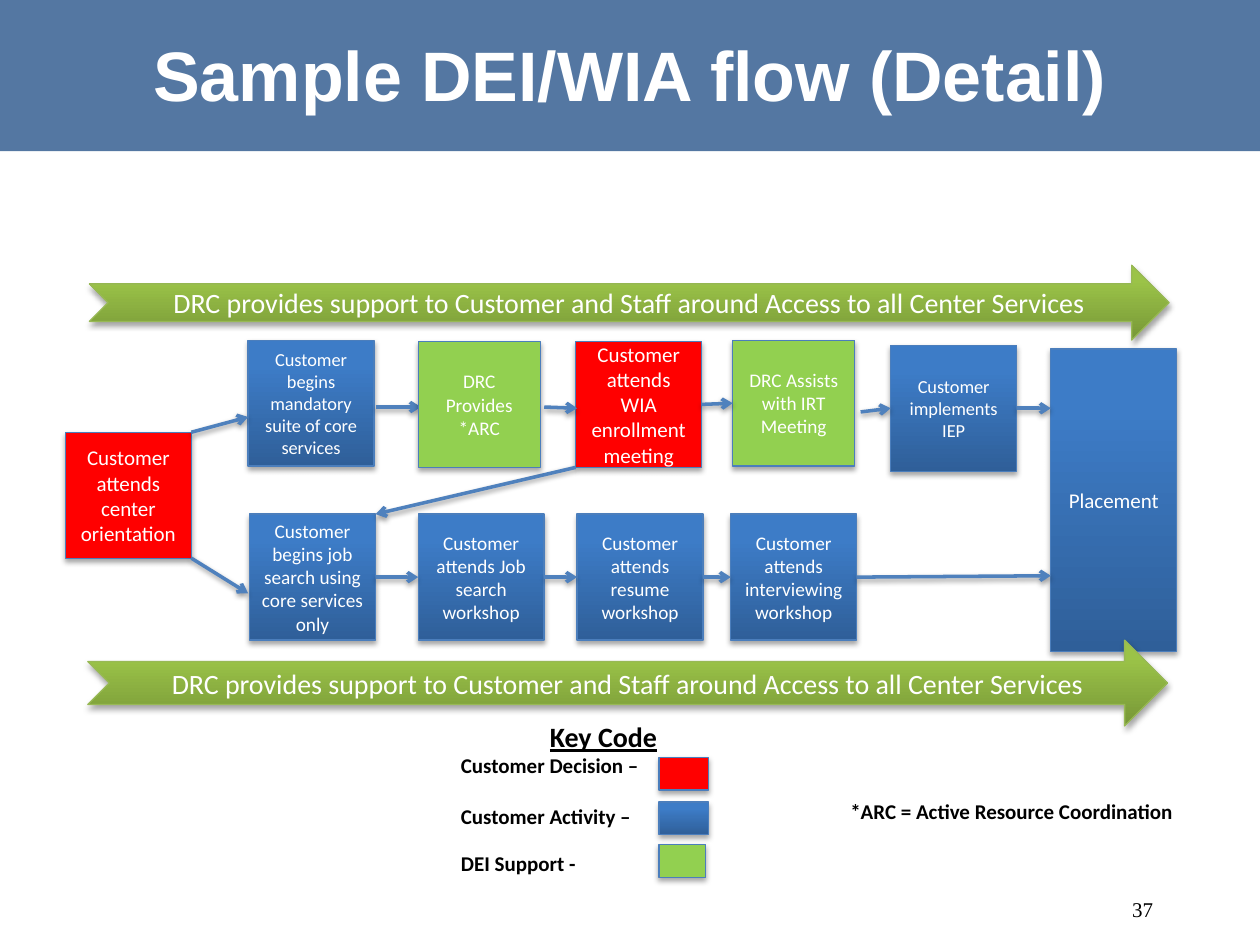
from lxml.etree import SubElement
from pptx import Presentation
from pptx.dml.color import RGBColor
from pptx.enum.shapes import MSO_CONNECTOR as CONN, MSO_SHAPE as SHAPE
from pptx.enum.text import MSO_ANCHOR as ANCHOR, PP_ALIGN as ALIGN
from pptx.oxml.ns import qn
from pptx.util import Pt

RED = ("FF0000",)
GREEN = ("92D050",)
BLUE = ("2F5F99", "3D7CC7")
OLIVE = ("779737", "9BC348")
WHITE, BLACK = "FFFFFF", "000000"


def rgb(value):
    return RGBColor.from_string(value)


def write(tf, text, size=12, color=WHITE, font="Calibri", bold=False,
          underline=False, align=ALIGN.CENTER, before=0):
    p = tf.paragraphs[0] if not tf.text else tf.add_paragraph()
    p.alignment = align
    p.space_before = Pt(before)
    r = p.add_run()
    r.text = text
    r.font.size, r.font.name = Pt(size), font
    r.font.bold, r.font.underline = bold, underline
    r.font.color.rgb = rgb(color)


def add_shadow(sp, alpha, distance):
    effects = SubElement(sp.element.spPr, qn("a:effectLst"))
    shadow = SubElement(effects, qn("a:outerShdw"), blurRad=str(Pt(3.1)),
                        dist=str(Pt(distance)), dir="5400000", rotWithShape="0")
    clr = SubElement(shadow, qn("a:srgbClr"), val=BLACK)
    SubElement(clr, qn("a:alpha"), val=str(alpha * 1000))


class FlowSlide:
    box_line, arrow_line = "4B7EBC", "4F81BD"

    def __init__(self, prs):
        self.s = prs.slides.add_slide(prs.slide_layouts[5])

    def title(self, text):
        title = self.s.shapes.title
        title.left, title.top, title.width, title.height = Pt(0), Pt(0), Pt(720), Pt(84.24)
        title.text_frame.vertical_anchor = ANCHOR.MIDDLE
        write(title.text_frame, text, size=40, font="Arial", bold=True)

    def band(self, x, y, w, h, color, opacity):
        sp = self.s.shapes.add_shape(SHAPE.RECTANGLE, Pt(x), Pt(y), Pt(w), Pt(h))
        sp.shadow.inherit = False
        sp.line.fill.background()
        sp.fill.solid()
        sp.fill.fore_color.rgb = rgb(color)
        clr = sp.element.spPr.find(".//" + qn("a:srgbClr"))
        SubElement(clr, qn("a:alpha"), val=str(opacity * 1000))
        self.s.shapes.title.element.addprevious(sp.element)

    def box(self, text, x, y, colors, w=72, h=72, size=11, kind=SHAPE.RECTANGLE,
            line=box_line):
        sp = self.s.shapes.add_shape(kind, Pt(x), Pt(y), Pt(w), Pt(h))
        if len(colors) == 1:
            sp.fill.solid()
            sp.fill.fore_color.rgb = rgb(colors[0])
        else:
            sp.fill.gradient()
            sp.fill.gradient_angle = 90
            for stop, color, position in zip(sp.fill.gradient_stops, colors, (0, 0.8)):
                stop.color.rgb = rgb(color)
                stop.position = position
        sp.line.color.rgb = rgb(line)
        sp.line.width = Pt(0.75)
        add_shadow(sp, 35, 1.8)
        if text:
            sp.text_frame.word_wrap = True
            sp.text_frame.vertical_anchor = ANCHOR.MIDDLE
            write(sp.text_frame, text, size=size)
        return sp

    def banner(self, text, x, y, h):
        self.box(text, x, y, OLIVE, w=617, h=h, size=16,
                 kind=SHAPE.NOTCHED_RIGHT_ARROW, line="98B955")

    def arrow(self, start=(0, 0), end=(0, 0), source=None, target=None):
        c = self.s.shapes.add_connector(CONN.STRAIGHT, *map(Pt, start + end))
        if source is not None:
            c.begin_connect(source, 3)
        if target is not None:
            c.end_connect(target, 1)
        c.line.color.rgb = rgb(self.arrow_line)
        c.line.width = Pt(2)
        SubElement(c.element.spPr.find(qn("a:ln")), qn("a:tailEnd"), type="arrow")
        add_shadow(c, 38, 1.6)

    def text(self, x, y, w, h, anchor=ANCHOR.TOP):
        tf = self.s.shapes.add_textbox(Pt(x), Pt(y), Pt(w), Pt(h)).text_frame
        tf.word_wrap = True
        tf.vertical_anchor = anchor
        return tf


def main():
    prs = Presentation()
    prs.slide_width, prs.slide_height = Pt(720), Pt(540)
    flow = FlowSlide(prs)
    flow.band(-0.72, 0, 720.72, 86.4, "376092", 85)
    flow.title("Sample DEI/WIA flow (Detail)")
    number = flow.text(498.2, 505.4, 167.8, 28.8, ANCHOR.MIDDLE)
    write(number, "37", color=BLACK, font="Times New Roman", align=ALIGN.RIGHT)

    flow.box("Customer attends center orientation", 37.4, 247, RED, size=12)
    flow.box("Customer begins mandatory suite of core services", 141.8, 194.4, BLUE, size=10.5)
    enrollment = flow.box("Customer attends WIA enrollment meeting", 329, 195.1, RED, size=12)
    flow.box("Placement", 600.5, 199.4, BLUE, h=172.8, size=12)
    workshops = [flow.box(text, x, 293.8, BLUE) for text, x in (
        ("Customer begins job search using core services only", 142.6),
        ("Customer attends Job search workshop", 239),
        ("Customer attends resume workshop", 329.8),
        ("Customer attends interviewing workshop", 417.6))]

    flow.arrow((109.4, 247), (141.8, 238.3))
    flow.arrow((109.4, 319), (141.8, 339.1))
    flow.arrow((214.6, 232.6), (240.5, 232.6))
    flow.arrow((329, 267.1), (214.6, 293.8))
    for source, target in zip(workshops, workshops[1:]):
        flow.arrow(source=source, target=target)
    flow.arrow(source=workshops[-1], end=(600.5, 329))

    flow.box("DRC Provides *ARC", 239, 195.1, GREEN, w=69.8)
    flow.arrow((311, 232.6), (329.8, 233.3))
    assists = flow.box("DRC Assists with IRT Meeting", 418.7, 194.4, GREEN, w=69.8)
    flow.arrow(source=enrollment, target=assists)
    plan = flow.box("Customer implements IEP", 509, 197.3, BLUE, size=10.5)
    flow.arrow((491.8, 235.4), target=plan)
    flow.arrow(source=plan, end=(600.5, 233.3))

    key = flow.text(256.3, 407.5, 177.1, 113.8)
    write(key, "Key Code", size=16, color=BLACK, bold=True, underline=True)
    for label, before in (("Customer Decision –", 0), ("Customer Activity –", 14.6),
                          ("DEI Support -", 12.2)):
        write(key, label, color=BLACK, bold=True, align=ALIGN.LEFT, before=before)
    for y, w, colors in ((432.7, 28.1, RED), (458.3, 28.1, BLUE), (482.6, 26.6, GREEN)):
        flow.box("", 376.6, y, colors, w=w, h=18.7)

    support = "DRC provides support to Customer and Staff around Access to all Center Services"
    flow.banner(support, 51.1, 151.6, 42.8)
    flow.banner(support, 50.2, 365.8, 49)
    note = flow.text(478.8, 452.9, 199.4, 21.6)
    write(note, "*ARC = Active Resource Coordination", color=BLACK, bold=True, align=ALIGN.LEFT)
    prs.save("out.pptx")


if __name__ == "__main__":
    main()
